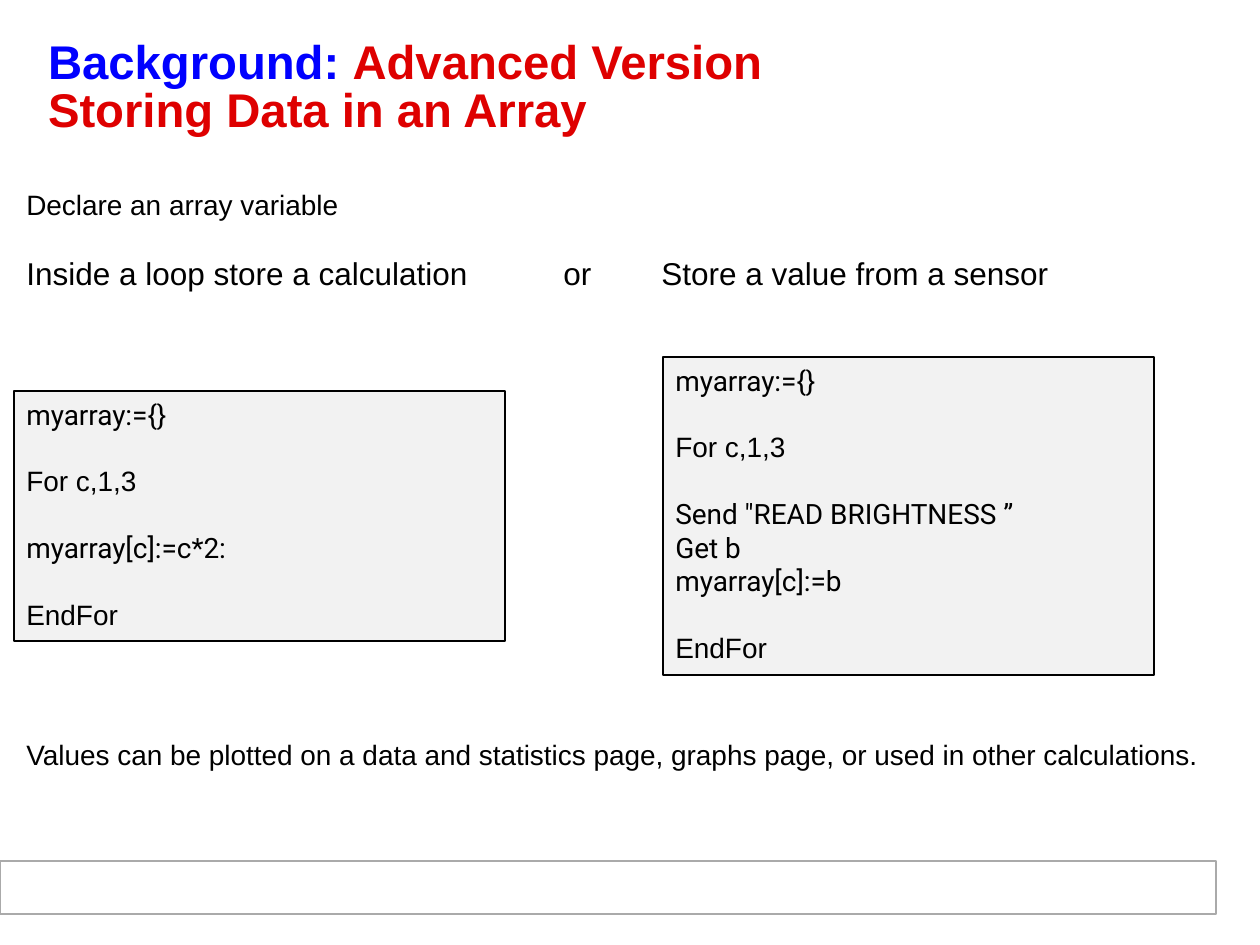
import pptx
import pptx.dml.color
import pptx.enum.shapes
import pptx.enum.text
import pptx.oxml
import pptx.oxml.ns
import pptx.util

SCALE = 914400 / 126
BLANK_LINE = 19


def px(length):
    return pptx.util.Emu(round(length * SCALE))


def color(value):
    return pptx.dml.color.RGBColor.from_string(value)


def format_paragraph(para, size, font="Arial", space=0):
    para.alignment = pptx.enum.text.PP_ALIGN.LEFT
    para.space_before = pptx.util.Pt(space)
    para.font.size = pptx.util.Pt(size)
    para.font.name = font
    para.font.color.rgb = color("000000")


def add_tabs(para, positions):
    tabs = pptx.oxml.parse_xml(f'<a:tabLst {pptx.oxml.ns.nsdecls("a")}/>')
    for position in positions:
        tabs.append(pptx.oxml.parse_xml(
            f'<a:tab {pptx.oxml.ns.nsdecls("a")} pos="{px(position)}" algn="l"/>'))
    para._p.get_or_add_pPr().append(tabs)


def add_panel(page, box, fill, line):
    panel = page.shapes.add_shape(
        pptx.enum.shapes.MSO_SHAPE.RECTANGLE, *map(px, box))
    panel.shadow.inherit = False
    panel.fill.solid()
    panel.fill.fore_color.rgb = color(fill)
    panel.line.color.rgb = color(line)
    panel.line.width = pptx.util.Pt(0.75)
    return panel


def add_title(page, box):
    title = page.shapes.title
    title.left, title.top, title.width, title.height = map(px, box)
    frame = title.text_frame
    frame.auto_size = pptx.enum.text.MSO_AUTO_SIZE.NONE
    frame.vertical_anchor = pptx.enum.text.MSO_ANCHOR.MIDDLE
    frame.margin_left = frame.margin_right = px(10)
    frame.margin_top = frame.margin_bottom = px(5)
    para = frame.paragraphs[0]
    format_paragraph(para, 27)
    para.font.bold = True
    para.line_spacing = 0.85
    for text, value in (("Background: ", "0000FF"),
                        ("Advanced Version", "DE0000"),
                        ("Storing Data in an Array", "DE0000")):
        if text.startswith("Storing"):
            para.add_line_break()
        span = para.add_run()
        span.text = text
        span.font.color.rgb = color(value)


def add_text(page, box, lines, tabs=()):
    frame = page.shapes.add_textbox(*map(px, box)).text_frame
    frame.word_wrap = True
    for index, (text, size) in enumerate(lines):
        para = frame.add_paragraph() if index else frame.paragraphs[0]
        para.text = text
        if "\t" in text:
            add_tabs(para, tabs)
        format_paragraph(para, size, space=BLANK_LINE if index else 0)


def add_code(page, box, blocks):
    frame = add_panel(page, box, "F2F2F2", "000000").text_frame
    frame.word_wrap = True
    frame.vertical_anchor = pptx.enum.text.MSO_ANCHOR.TOP
    para = frame.paragraphs[0]
    for block_index, (font, lines) in enumerate(blocks):
        for line_index, text in enumerate(lines):
            if block_index or line_index:
                para = frame.add_paragraph()
            para.text = text
            starts_block = block_index and not line_index
            format_paragraph(para, 16, font, BLANK_LINE if starts_block else 0)


def add_loop(page, box, body):
    add_code(page, box, (("Roboto", ("myarray:={}",)),
                         ("Arial", ("For c,1,3",)),
                         ("Roboto", body),
                         ("Arial", ("EndFor",))))


def main():
    deck = pptx.Presentation()
    deck.slide_width, deck.slide_height = px(1260), px(945)
    page = deck.slides.add_slide(deck.slide_layouts[5])
    add_panel(page, (0, 861, 1216, 53), "FFFFFF", "AAAAAA")
    add_title(page, (38, 10, 1159, 158))
    add_text(page, (14, 181, 1183, 118), (
        ("Declare an array variable", 16),
        ("Inside a loop store a calculation\tor\tStore a value from a sensor", 18),
    ), tabs=(537, 635))
    add_loop(page, (14, 391, 491, 250), ("myarray[c]:=c*2:",))
    add_loop(page, (663, 357, 491, 318),
             ('Send "READ BRIGHTNESS ”', "Get b", "myarray[c]:=b"))
    add_text(page, (14, 731, 1230, 47), ((
        "Values can be plotted on a data and statistics page, graphs page, "
        "or used in other calculations.", 16),))
    deck.save("out.pptx")


if __name__ == "__main__":
    main()
